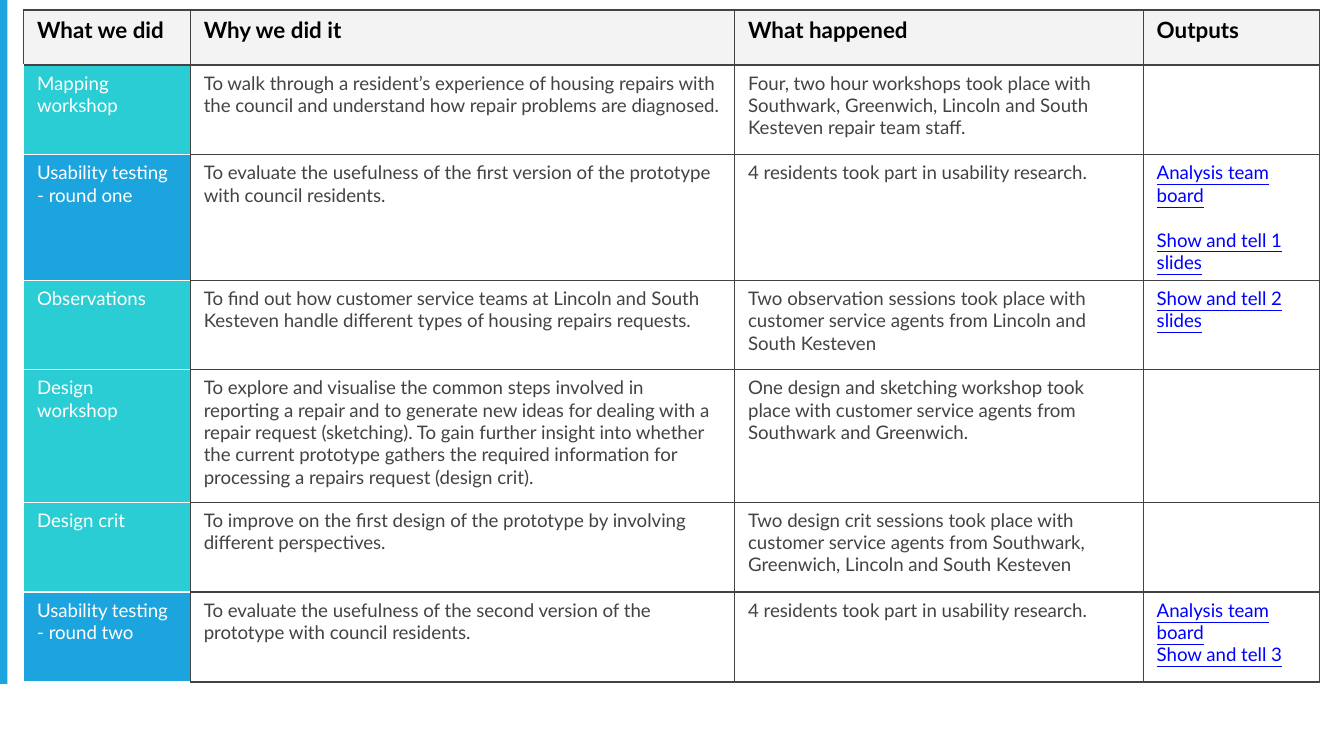
"""Build a slide with a table of research activities, reasons, results and outputs."""
from lxml import etree
from pptx import Presentation
from pptx import util as u
from pptx.dml.color import RGBColor
from pptx.enum import shapes
from pptx.oxml import ns

BLACK = RGBColor(0x00, 0x00, 0x00)
WHITE = RGBColor(0xFF, 0xFF, 0xFF)
GREY = RGBColor(0x43, 0x43, 0x43)
PALE = RGBColor(0xF3, 0xF3, 0xF3)
TEAL = RGBColor(0x29, 0xCD, 0xD3)
BLUE = RGBColor(0x1C, 0xA4, 0xDE)
LINK = RGBColor(0x00, 0x00, 0xFF)

HEADER = {"size": u.Pt(12), "bold": True, "underline": False}
BODY = {"size": u.Pt(10), "bold": False, "underline": False}
OUTPUT = {**BODY, "underline": True}

WIDTHS = [89.3, 291.6, 218.9, 94.3]
HEIGHTS = [29.5, 48.2, 66.4, 47.9, 71, 48.2, 48.2]
LINK_GAP = 12

ROWS = [
    ("What we did", "Why we did it", "What happened", ["Outputs"]),
    (
        "Mapping workshop",
        "To walk through a resident’s experience of housing repairs with the council "
        "and understand how repair problems are diagnosed.",
        "Four, two hour workshops took place with Southwark, Greenwich, Lincoln and "
        "South Kesteven repair team staff.",
        [],
    ),
    (
        "Usability testing - round one",
        "To evaluate the usefulness of the first version of the prototype with council residents.",
        "4 residents took part in usability research.",
        ["Analysis team board", "Show and tell 1 slides"],
    ),
    (
        "Observations",
        "To find out how customer service teams at Lincoln and South Kesteven handle "
        "different types of housing repairs requests.",
        "Two observation sessions took place with customer service agents from Lincoln "
        "and South Kesteven",
        ["Show and tell 2 slides"],
    ),
    (
        "Design workshop",
        "To explore and visualise the common steps involved in reporting a repair and to "
        "generate new ideas for dealing with a repair request (sketching). To gain further "
        "insight into whether the current prototype gathers the required information for "
        "processing a repairs request (design crit).",
        "One design and sketching workshop took place with customer service agents from "
        "Southwark and Greenwich.",
        [],
    ),
    (
        "Design crit",
        "To improve on the first design of the prototype by involving different perspectives.",
        "Two design crit sessions took place with customer service agents from Southwark, "
        "Greenwich, Lincoln and South Kesteven",
        [],
    ),
    (
        "Usability testing - round two",
        "To evaluate the usefulness of the second version of the prototype with council residents.",
        "4 residents took part in usability research.",
        ["Analysis team board", "Show and tell 3"],
    ),
]


def draw_borders(cell, colours):
    properties = cell._tc.get_or_add_tcPr()
    for side, colour in colours.items():
        line = etree.SubElement(properties, ns.qn(f"a:ln{side}"), w=str(u.Pt(0.75)))
        fill = etree.SubElement(line, ns.qn("a:solidFill"))
        etree.SubElement(fill, ns.qn("a:srgbClr"), val=str(colour))


def write_paragraph(para, words, colour, style):
    span = para.add_run()
    span.text = words
    for name, value in {"name": "Lato", **style}.items():
        setattr(span.font, name, value)
    span.font.color.rgb = colour


deck = Presentation()
deck.slide_width = u.Pt(720)
deck.slide_height = u.Pt(405)
page = deck.slides.add_slide(deck.slide_layouts[6])

bar = page.shapes.add_shape(
    shapes.MSO_SHAPE.RECTANGLE, u.Pt(-0.7), u.Pt(-0.7), u.Pt(4.7), u.Pt(367.2)
)
bar.shadow.inherit = False
bar.fill.solid()
bar.fill.fore_color.rgb = BLUE
bar.line.fill.background()

frame = page.shapes.add_table(
    len(ROWS), len(WIDTHS), u.Pt(12.7), u.Pt(5.3), u.Pt(sum(WIDTHS)), u.Pt(sum(HEIGHTS))
)
table = frame.table
table.first_row = False
table.horz_banding = False
for column, width in zip(table.columns, WIDTHS):
    column.width = u.Pt(width)
for row, height in zip(table.rows, HEIGHTS):
    row.height = u.Pt(height)

for row_index, row in enumerate(ROWS):
    for column_index, content in enumerate(row):
        cell = table.cell(row_index, column_index)
        is_header = row_index == 0
        is_activity = column_index == 0 and not is_header
        is_output = column_index == 3 and not is_header

        borders = dict.fromkeys("LRTB", GREY)
        if is_activity:
            borders.update(L=WHITE, T=GREY if row_index == 1 else WHITE, B=WHITE)
        draw_borders(cell, borders)

        if is_header or is_activity:
            cell.fill.solid()
            usability = row[0].startswith("Usability")
            cell.fill.fore_color.rgb = PALE if is_header else BLUE if usability else TEAL
        else:
            cell.fill.background()

        colour = BLACK if is_header else WHITE if is_activity else LINK if is_output else GREY
        style = HEADER if is_header else OUTPUT if is_output else BODY
        lines = content if column_index == 3 else [content]
        for line_index, words in enumerate(lines):
            paragraphs = cell.text_frame
            para = paragraphs.add_paragraph() if line_index else paragraphs.paragraphs[0]
            write_paragraph(para, words, colour, style)
            if words == "Show and tell 1 slides":
                para.space_before = u.Pt(LINK_GAP)

deck.save("out.pptx")
